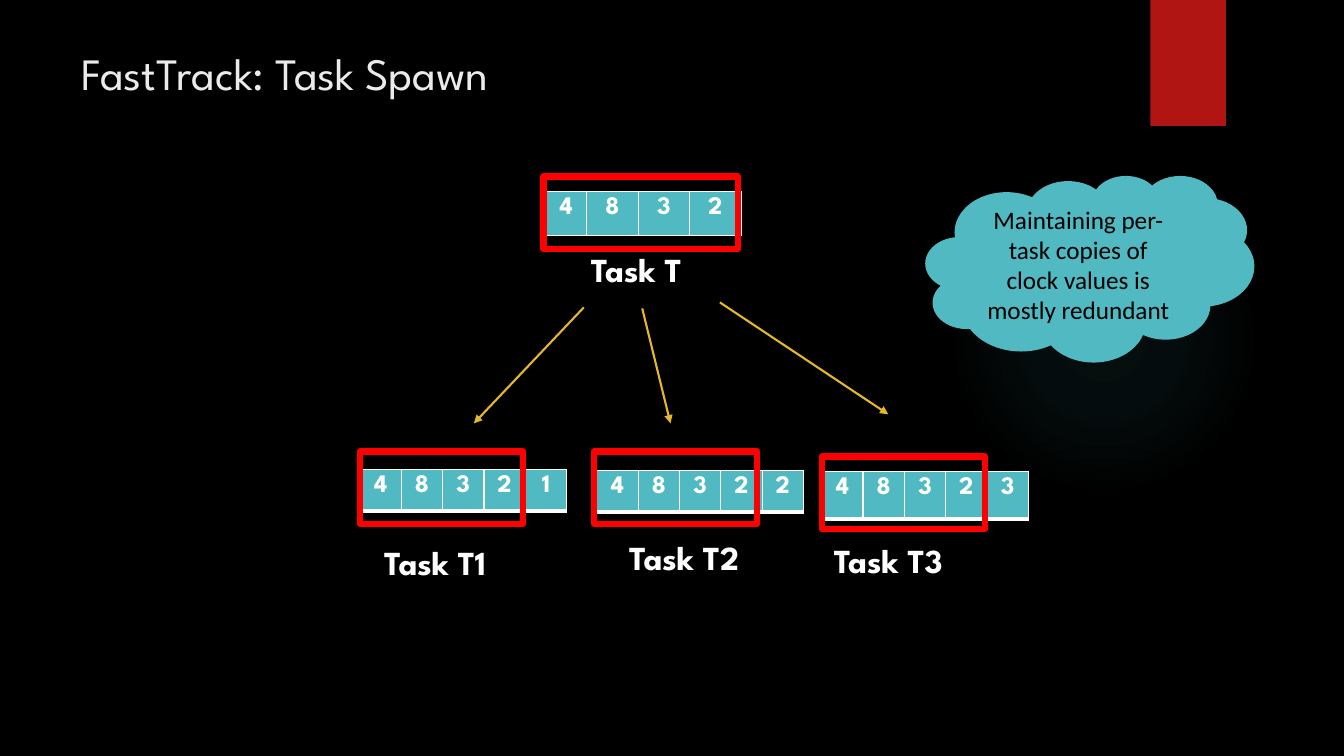
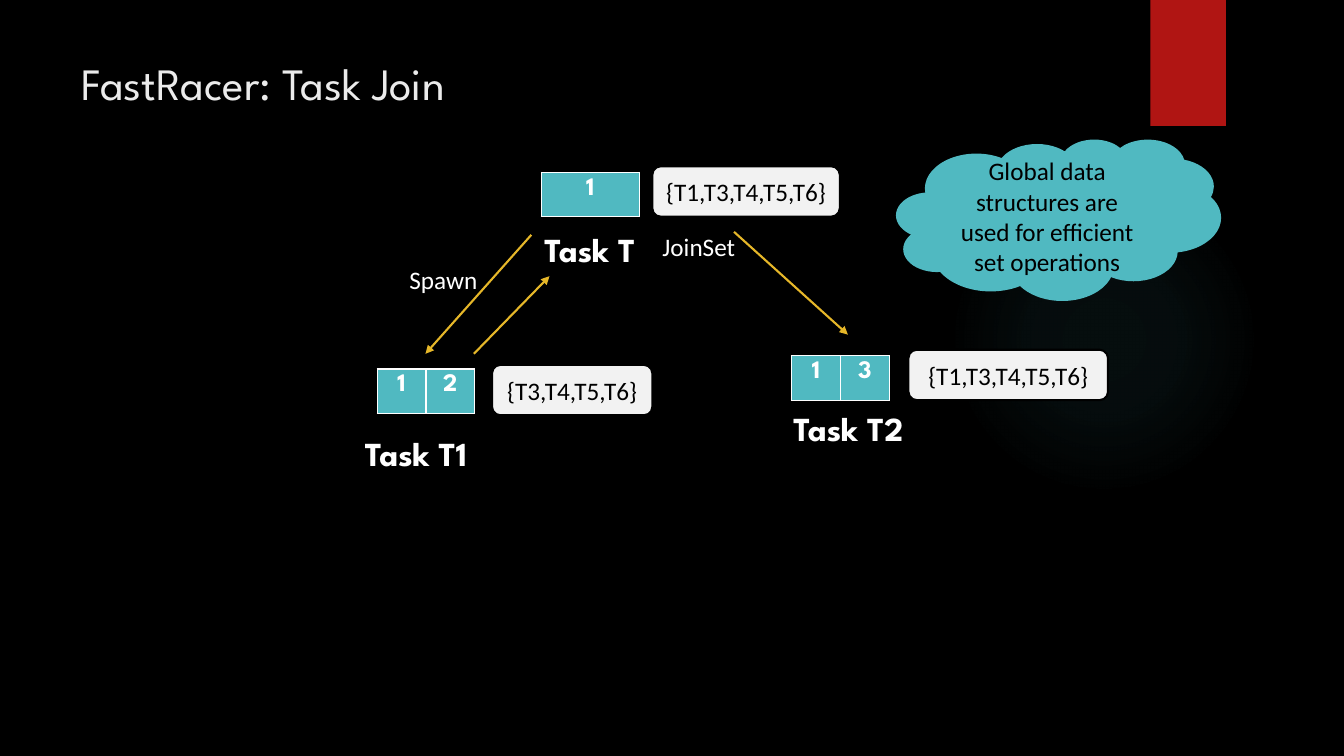
"""Build two slides showing how vector clocks change on task spawn and task join."""
import pptx
import pptx.dml.color
import pptx.enum.shapes
import pptx.enum.text
import pptx.oxml
import pptx.oxml.ns
import pptx.util

Inches = pptx.util.Inches
Pt = pptx.util.Pt
SHAPE = pptx.enum.shapes.MSO_SHAPE
ALIGN = pptx.enum.text.PP_ALIGN
ANCHOR = pptx.enum.text.MSO_ANCHOR
NAMESPACE = pptx.oxml.ns.nsdecls("a")

COLORS = {
    "black": "000000", "white": "FFFFFF", "title": "EBEBEB", "ribbon": "B01513",
    "teal": "50B9C1", "gold": "E6B729", "frame": "FF0000", "set": "F2F2F2",
}
HEADING = "League Spartan"
BODY = "Calibri"
GLOW_STOPS = [(0, 7), (36, 6), (69, 0)]
BRANCH = 0.41
HALF = 0.485

PAGES = [
    {
        "title": ("FastTrack: Task Spawn", 0.4, 0.88),
        "clocks": [
            (5.41, 1.9, 0.44, [BRANCH] + [0.51] * 3, "4832", 1),
            (3.57, 4.66, 0.41, [BRANCH] * 5, "48321", 3),
            (5.92, 4.67, 0.41, [BRANCH] * 5, "48322", 3),
            (8.15, 4.68, 0.47, [BRANCH] * 5, "48323", 3),
        ],
        "tasks": [
            ("Task T1", 3.36, 5.33), ("Task T2", 5.79, 5.28),
            ("Task T3", 7.82, 5.31), ("Task T", 5.41, 2.42),
        ],
        "notes": [],
        "arrows": [
            (5.79, 3.05, 4.7, 4.2), (6.37, 3.06, 6.65, 4.2), (7.14, 3, 8.81, 4.11),
        ],
        "frames": [
            (3.57, 4.48, 1.62), (5.89, 4.48, 1.62),
            (8.15, 4.53, 1.62), (5.39, 1.75, 1.93),
        ],
        "sets": [],
        "cloud": ("Maintaining per-task copies of clock values is mostly redundant",
                  (9.19, 1.75, 3.24, 1.83)),
    },
    {
        "title": ("FastRacer: Task Join", 0.5, 1.53),
        "clocks": [
            (5.37, 1.71, 0.44, [2 * HALF], "1", 1),
            (3.74, 3.66, 0.44, [HALF] * 2, "12", 1),
            (7.85, 3.53, 0.44, [HALF] * 2, "13", 1),
        ],
        "tasks": [("Task T", 4.95, 2.22), ("Task T1", 3.17, 4.25), ("Task T2", 7.42, 4)],
        "notes": [("Spawn", 3.74, 2.57), ("JoinSet", 6.25, 2.25)],
        "arrows": [
            (5.27, 2.33, 4.22, 3.51), (4.7, 3.51, 5.45, 2.74), (7.28, 2.3, 8.41, 3.32),
        ],
        "frames": [],
        "sets": [
            ("{T3,T4,T5,T6}", 4.88, 3.62, 1.59),
            ("{T1,T3,T4,T5,T6}", 6.47, 1.65, 1.86),
            ("{T1,T3,T4,T5,T6}", 9.01, 3.47, 1.98),
        ],
        "cloud": ("Global data structures are used for efficient set operations",
                  (8.9, 1.39, 3.2, 1.58)),
    },
]


def color(name):
    return pptx.dml.color.RGBColor.from_string(COLORS[name])


def write(frame, text, *, size=18, font=BODY, ink="white", bold=False,
          align=ALIGN.LEFT, anchor=None):
    para = frame.paragraphs[0]
    para.alignment = align
    span = para.add_run()
    span.text = text
    span.font.size = Pt(size)
    span.font.name = font
    span.font.bold = bold
    span.font.color.rgb = color(ink)
    if anchor is not None:
        frame.vertical_anchor = anchor


def add_shape(page, kind, place, fill=None, line=None, weight=1.5):
    shape = page.shapes.add_shape(kind, *map(Inches, place))
    shape.shadow.inherit = False
    if fill:
        shape.fill.solid()
        shape.fill.fore_color.rgb = color(fill)
    else:
        shape.fill.background()
    if line:
        shape.line.color.rgb = color(line)
        shape.line.width = Pt(weight)
    else:
        shape.line.fill.background()
    return shape


def add_captioned(page, kind, place, text, fill, line):
    shape = add_shape(page, kind, place, fill, line)
    shape.text_frame.word_wrap = True
    write(shape.text_frame, text, ink="black", align=ALIGN.CENTER, anchor=ANCHOR.MIDDLE)


def add_label(page, text, place, indent, **style):
    box = page.shapes.add_textbox(*map(Inches, place))
    frame = box.text_frame
    frame.word_wrap = True
    frame.margin_left = Inches(indent)
    frame.margin_right = 0
    write(frame, text, **style)


def add_clock(page, left, top, height, widths, values, bottom):
    place = map(Inches, (left, top, sum(widths), height))
    clock = page.shapes.add_table(1, len(widths), *place)
    table = clock.table
    table.first_row = table.horz_banding = False
    for index, (width, value) in enumerate(zip(widths, values)):
        table.columns[index].width = Inches(width)
        cell = table.cell(0, index)
        cell.fill.solid()
        cell.fill.fore_color.rgb = color("teal")
        write(cell.text_frame, value, font=HEADING, bold=True, align=ALIGN.CENTER)
    for properties in clock.element.iter(pptx.oxml.ns.qn("a:tcPr")):
        for order, (side, weight) in enumerate(zip("LRTB", (1, 1, 1, bottom))):
            properties.insert(order, pptx.oxml.parse_xml(
                f'<a:ln{side} {NAMESPACE} w="{int(Pt(weight))}"><a:solidFill>'
                f'<a:srgbClr val="{COLORS["white"]}"/></a:solidFill></a:ln{side}>'))


def add_arrow(page, *ends):
    arrow = page.shapes.add_connector(
        pptx.enum.shapes.MSO_CONNECTOR.STRAIGHT, *map(Inches, ends))
    arrow.line.color.rgb = color("gold")
    arrow.line.width = Pt(1.5)
    properties = arrow.element.spPr
    properties.find(pptx.oxml.ns.qn("a:ln")).append(
        pptx.oxml.parse_xml(f'<a:tailEnd {NAMESPACE} type="triangle"/>'))
    properties.append(pptx.oxml.parse_xml(f"<a:effectLst {NAMESPACE}/>"))


def decorate_master(master, page):
    """Give the master its black ground, faint glow and red ribbon."""
    master.background.fill.solid()
    master.background.fill.fore_color.rgb = color("black")
    glow = add_shape(page, SHAPE.OVAL, (9.41, 1.83, 3.08, 3.08), "teal")
    stops = "".join(
        f'<a:gs pos="{position * 1000}"><a:srgbClr val="{COLORS["teal"]}">'
        f'<a:alpha val="{alpha * 1000}"/></a:srgbClr></a:gs>'
        for position, alpha in GLOW_STOPS)
    properties = glow.element.spPr
    properties.replace(
        properties.find(pptx.oxml.ns.qn("a:solidFill")),
        pptx.oxml.parse_xml(
            f'<a:gradFill {NAMESPACE}><a:gsLst>{stops}</a:gsLst><a:path path="circle">'
            '<a:fillToRect l="50000" t="50000" r="50000" b="50000"/></a:path></a:gradFill>'))
    ribbon = add_shape(page, SHAPE.RECTANGLE, (11.41, 0, 0.75, 1.25), "ribbon")
    for order, shape in enumerate((glow, ribbon), start=2):
        master.shapes.element.insert(order, shape.element)


def set_title(page, text, top, height):
    title = page.shapes.title
    title.left, title.top, title.width, title.height = map(Inches, (0.71, top, 10.29, height))
    title.text_frame.auto_size = pptx.enum.text.MSO_AUTO_SIZE.NONE
    write(title.text_frame, text, size=32, font=HEADING, ink="title", anchor=ANCHOR.TOP)


def fill_page(page, content):
    set_title(page, *content["title"])
    for clock in content["clocks"]:
        add_clock(page, *clock)
    for text, left, top in content["tasks"]:
        add_label(page, text, (left, top, 2.03, 0.5), 0.45, size=24, font=HEADING, bold=True)
    for text, left, top in content["notes"]:
        add_label(page, text, (left, top, 1.19, 0.4), 0.32)
    for ends in content["arrows"]:
        add_arrow(page, *ends)
    for left, top, width in content["frames"]:
        add_shape(page, SHAPE.RECTANGLE, (left, top, width, 0.72), line="frame", weight=4.5)
    for text, left, top, width in content["sets"]:
        add_captioned(page, SHAPE.ROUNDED_RECTANGLE, (left, top, width, 0.5),
                      text, "set", "black")
    text, place = content["cloud"]
    add_captioned(page, SHAPE.CLOUD, place, text, "teal", "teal")


def main():
    deck = pptx.Presentation()
    deck.slide_width, deck.slide_height = Inches(13.33), Inches(7.5)
    layout = deck.slide_layouts.get_by_name("Title Only")
    pages = [deck.slides.add_slide(layout) for _ in PAGES]
    decorate_master(deck.slide_master, pages[0])
    for page, content in zip(pages, PAGES):
        fill_page(page, content)
    deck.save("out.pptx")


if __name__ == "__main__":
    main()
